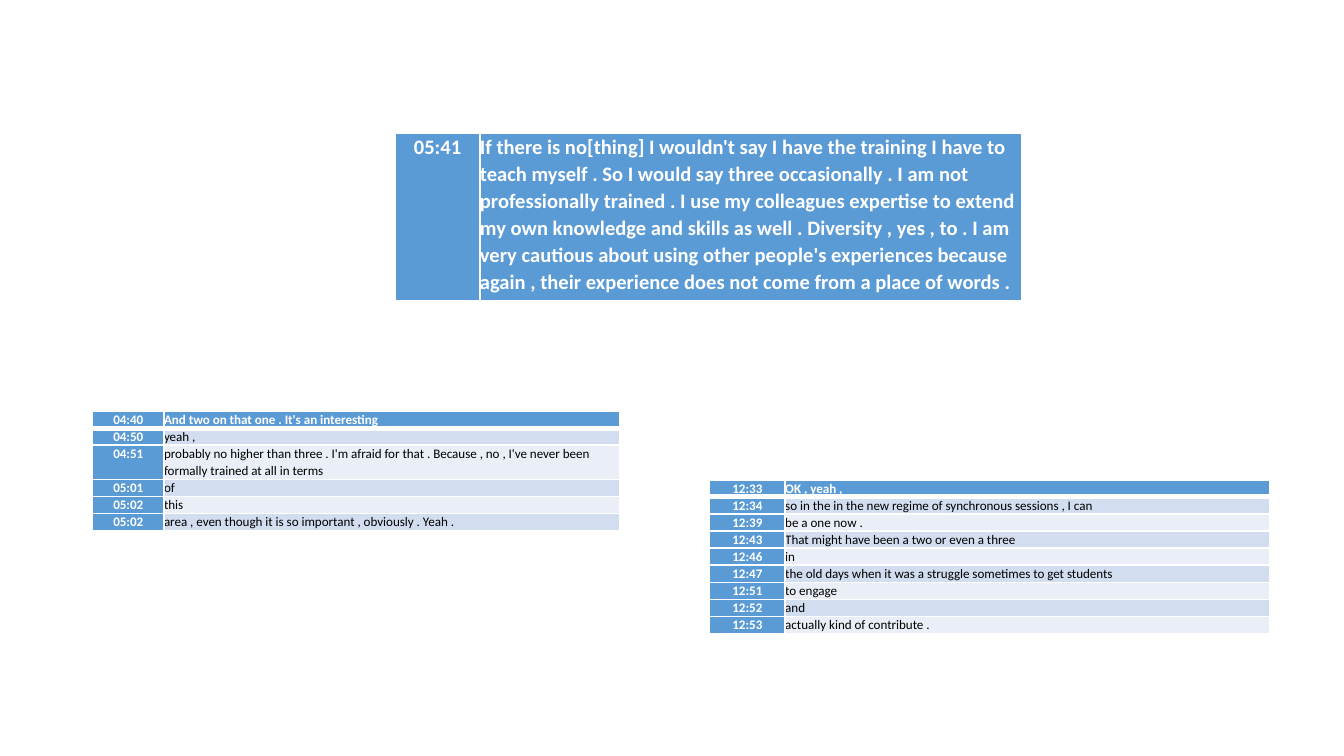
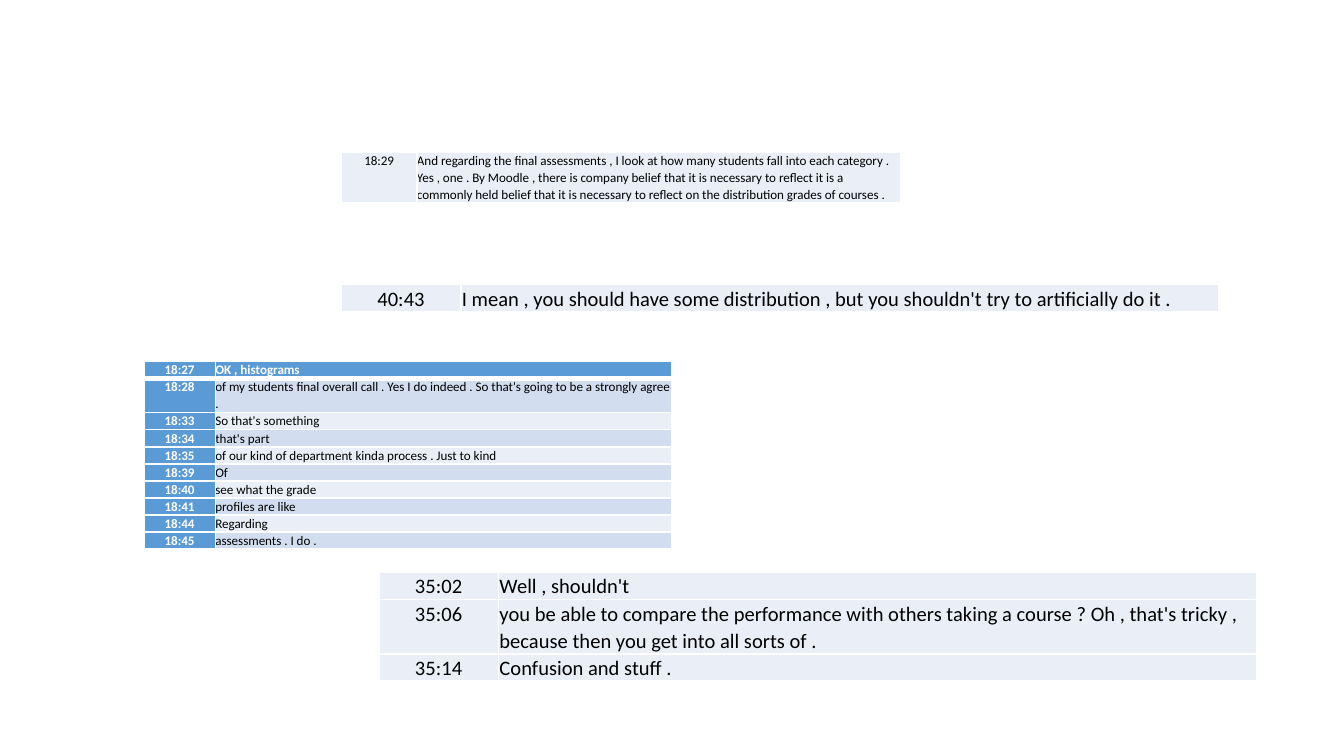
import pptx
import pptx.dml.color
import pptx.enum.text
import pptx.oxml
import pptx.oxml.ns
import pptx.util
from lxml import etree

Cm = pptx.util.Cm
Pt = pptx.util.Pt
RGB = pptx.dml.color.RGBColor
ALIGN = pptx.enum.text.PP_ALIGN
qn = pptx.oxml.ns.qn

BLUE = RGB(0x5B, 0x9B, 0xD5)
BAND = RGB(0xD2, 0xDE, 0xEF)
PALE = RGB(0xEA, 0xEF, 0xF7)
WHITE = RGB(0xFF, 0xFF, 0xFF)
BLACK = RGB(0x00, 0x00, 0x00)
FONT = "Calibri"
THIN, THICK = 1, 3
SMALL, LARGE = 7, 11

TRAINING = [
    ("04:40", "And two on that one . It's an interesting"),
    ("04:50", "yeah ,"),
    ("04:51", "probably no higher than three . I'm afraid for that . Because , no , "
              "I've never been formally trained at all in terms"),
    ("05:01", "of"),
    ("05:02", "this"),
    ("05:02", "area , even though it is so important , obviously . Yeah ."),
]
ENGAGE = [
    ("12:33", "OK , yeah ,"),
    ("12:34", "so in the in the new regime of synchronous sessions , I can"),
    ("12:39", "be a one now ."),
    ("12:43", "That might have been a two or even a three"),
    ("12:46", "in"),
    ("12:47", "the old days when it was a struggle sometimes to get students"),
    ("12:51", "to engage"),
    ("12:52", "and"),
    ("12:53", "actually kind of contribute ."),
]
SKILLS = [
    ("05:41", "If there is no[thing] I wouldn't say I have the training I have to "
              "teach myself . So I would say three occasionally . I am not "
              "professionally trained . I use my colleagues expertise to extend "
              "my own knowledge and skills as well . Diversity , yes , to . I am "
              "very cautious about using other people's experiences because "
              "again , their experience does not come from a place of words ."),
]
GRADES = [
    ("18:27", "OK , histograms"),
    ("18:28", "of my students final overall call . Yes I do indeed . "
              "So that's going to be a strongly agree ."),
    ("18:33", "So that's something"),
    ("18:34", "that's part"),
    ("18:35", "of our kind of department kinda process . Just to kind"),
    ("18:39", "Of"),
    ("18:40", "see what the grade"),
    ("18:41", "profiles are like"),
    ("18:44", "Regarding"),
    ("18:45", "assessments . I do ."),
]
FINALS = [
    ("18:29", "And regarding the final assessments , I look at how many students "
              "fall into each category . Yes , one . By Moodle , there is company "
              "belief that it is necessary to reflect it is a commonly held belief "
              "that it is necessary to reflect on the distribution grades of courses ."),
]
SPREAD = [
    ("40:43", "I mean , you should have some distribution , "
              "but you shouldn't try to artificially do it ."),
]
COMPARE = [
    ("35:02", "Well , shouldn't"),
    ("35:06", "you be able to compare the performance with others taking a course ? "
              "Oh , that's tricky , because then you get into all sorts of ."),
    ("35:14", "Confusion and stuff ."),
]


def edge(cell, top, base):
    """Draw white borders, with the given top and bottom widths in points."""
    props = cell._tc.get_or_add_tcPr()
    for tag, wide in (("a:lnL", THIN), ("a:lnR", THIN), ("a:lnT", top), ("a:lnB", base)):
        line = etree.SubElement(props, qn(tag), w=str(Pt(wide)))
        fill = etree.SubElement(line, qn("a:solidFill"))
        etree.SubElement(fill, qn("a:srgbClr"), val=str(WHITE))


def write(cell, text, size, tint, first, pad):
    """Fill one cell; blue cells carry bold white text."""
    cell.margin_left = cell.margin_right = Cm(pad)
    cell.margin_top = cell.margin_bottom = 0
    cell.fill.solid()
    cell.fill.fore_color.rgb = tint
    cell.text = text
    para = cell.text_frame.paragraphs[0]
    para.alignment = ALIGN.CENTER if first else ALIGN.LEFT
    para.line_spacing = 1.07
    para.space_after = Pt(8)
    para.font.name = FONT
    para.font.size = Pt(size)
    para.font.bold = tint == BLUE
    para.font.color.rgb = WHITE if tint == BLUE else BLACK


def shade(row, col, head):
    """Pick a cell's fill: blue head row and time column, else bands."""
    if not head:
        return PALE
    if row == 0 or col == 0:
        return BLUE
    return BAND if row % 2 else PALE


def script(slide, box, split, lines, size, pitch, head=True, pad=0):
    """Place timed speech; split is the time column's width, pitch the least row height."""
    left, top, width, height = box
    frame = slide.shapes.add_table(len(lines), 2, *map(Cm, box))
    table = frame.table
    table.first_row = table.horz_banding = False
    table.columns[0].width = Cm(split)
    table.columns[1].width = Cm(width - split)
    for row, line in enumerate(lines):
        table.rows[row].height = Cm(pitch)
        for col, text in enumerate(line):
            cell = table.cell(row, col)
            edge(cell, THICK if head and row == 1 else THIN,
                 THICK if head and row == 0 else THIN)
            write(cell, text, size, shade(row, col, head), col == 0, pad)
    frame.height = Cm(height)


def skills(slide):
    script(slide, (1.75, 7.77, 9.97, 2.13), 1.35, TRAINING, SMALL, 0.28)
    script(slide, (13.41, 9.07, 10.58, 2.74), 1.43, ENGAGE, SMALL, 0.3)
    script(slide, (7.47, 2.51, 11.84, 3.2), 1.6, SKILLS, LARGE, 3.2)


def grades(slide):
    script(slide, (2.72, 6.83, 9.97, 3.35), 1.35, GRADES, SMALL, 0.28)
    script(slide, (6.45, 2.87, 10.58, 0.94), 1.43, FINALS, SMALL, 0.94, head=False)
    script(slide, (6.45, 5.38, 16.59, 0.48), 2.26, SPREAD, LARGE, 0, False, 0.02)
    script(slide, (7.16, 10.82, 16.59, 1.93), 2.26, COMPARE, LARGE, 0, False, 0.02)


def main():
    deck = pptx.Presentation()
    deck.slide_width, deck.slide_height = Cm(25.4), Cm(14.29)
    for build in (skills, grades):
        build(deck.slides.add_slide(deck.slide_layouts[6]))
    deck.save("out.pptx")


if __name__ == "__main__":
    main()
